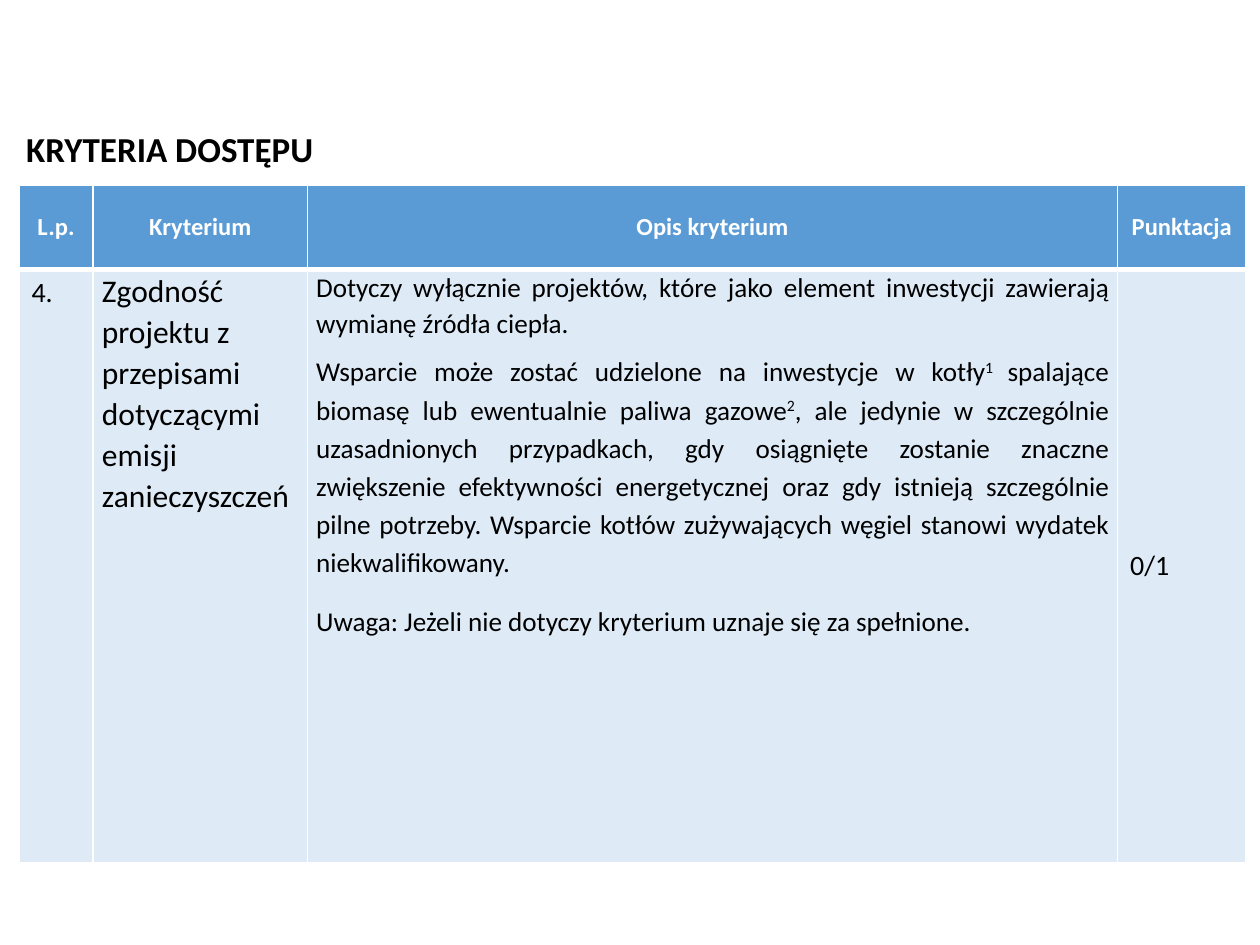
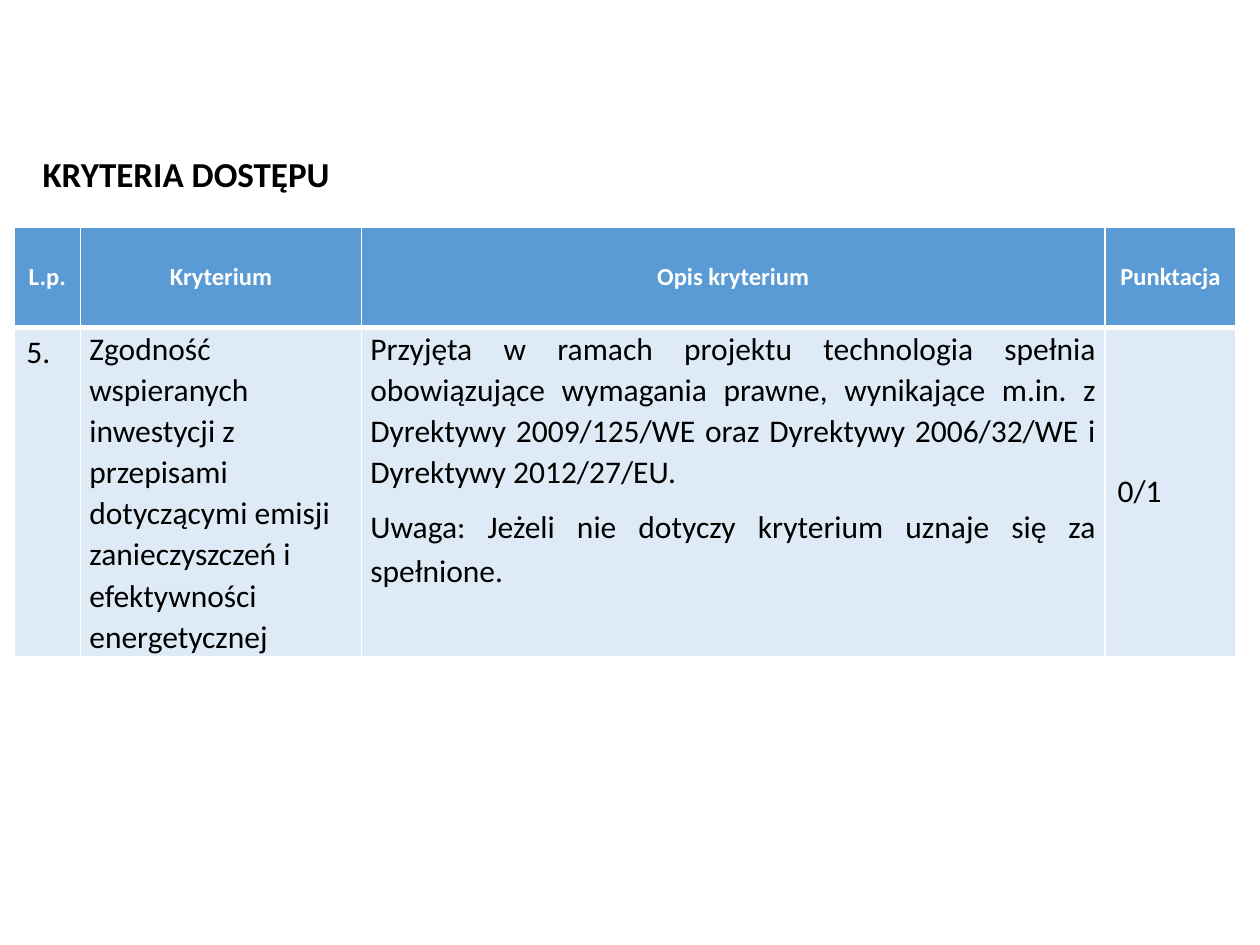
from lxml.etree import SubElement
from pptx import Presentation
from pptx.dml.color import RGBColor
from pptx.enum.text import MSO_ANCHOR as Anchor, MSO_AUTO_SIZE as AutoSize, PP_ALIGN as Align
from pptx.oxml.ns import qn
from pptx.util import Pt

EMU_PER_PX = 9144
FONT = "Calibri"
WHITE, BLACK = "FFFFFF", "000000"
HEADER_FILL, BODY_FILL = "5B9BD5", "DEEBF7"
TITLE = "KRYTERIA DOSTĘPU"
HEADINGS = ["L.p.", "Kryterium", "Opis kryterium", "Punktacja"]
NOTE = "Uwaga: Jeżeli nie dotyczy kryterium uznaje się za spełnione."
SCORE = "0/1"

CENTERED = {"alignment": Align.CENTER}
CRITERION = {"line_spacing": 1.07, "space_after": Pt(6)}
LEAD = {"alignment": Align.JUSTIFY, "line_spacing": 1.07}
DETAIL = {"alignment": Align.JUSTIFY, "line_spacing": 1.15,
          "space_before": Pt(6), "space_after": Pt(6)}
MIDDLE = {"vertical_anchor": Anchor.MIDDLE}


def px(value):
    return int(value * EMU_PER_PX)


def color(value):
    return RGBColor.from_string(value)


def apply(target, values):
    for name, value in values.items():
        setattr(target, name, value)


TIGHT = {"margin_left": px(7), "margin_right": px(7), "margin_top": 0, "margin_bottom": 0}


def write_text(frame, paragraphs, size, ink=BLACK, bold=False):
    for index, (runs, layout) in enumerate(paragraphs):
        paragraph = frame.add_paragraph() if index else frame.paragraphs[0]
        apply(paragraph, layout)
        for position, text in enumerate(runs):
            run = paragraph.add_run()
            run.text = text
            apply(run.font, {"name": FONT, "size": Pt(size), "bold": bold})
            run.font.color.rgb = color(ink)
            if position % 2:
                run._r.get_or_add_rPr().set("baseline", "30000")


def add_borders(cell, top, bottom):
    properties = cell._tc.get_or_add_tcPr()
    for side, width in {"L": 1, "R": 1, "T": top, "B": bottom}.items():
        line = SubElement(properties, qn(f"a:ln{side}"), w=str(Pt(width)))
        fill = SubElement(line, qn("a:solidFill"))
        SubElement(fill, qn("a:srgbClr"), val=WHITE)


def style_cell(cell, fill, top, bottom, layout):
    add_borders(cell, top, bottom)
    cell.fill.solid()
    cell.fill.fore_color.rgb = color(fill)
    apply(cell, layout)


def add_title(slide, left, top):
    frame = slide.shapes.add_textbox(px(left), px(top), px(370), px(44)).text_frame
    apply(frame, {"word_wrap": True, "auto_size": AutoSize.SHAPE_TO_FIT_TEXT, **MIDDLE})
    write_text(frame, [([TITLE], {})], 20, bold=True)


def add_criteria_table(slide, left, top, widths, heights, entries):
    table = slide.shapes.add_table(2, len(widths), px(left), px(top),
                                   px(sum(widths)), px(sum(heights))).table
    table.horz_banding = False
    for column, width in zip(table.columns, widths):
        column.width = px(width)
    for row, height in zip(table.rows, heights):
        row.height = px(height)
    for cell, heading in zip(table.rows[0].cells, HEADINGS):
        style_cell(cell, HEADER_FILL, 1, 3, MIDDLE)
        write_text(cell.text_frame, [([heading], CENTERED)], 14, WHITE, True)
    for cell, (paragraphs, size), layout in zip(
            table.rows[1].cells, entries, [{}, TIGHT, TIGHT, MIDDLE]):
        style_cell(cell, BODY_FILL, 3, 1, layout)
        write_text(cell.text_frame, paragraphs, size)


def add_criterion_slide(presentation, title_at, table_at, widths, heights,
                        number, criterion, description, sizes):
    slide = presentation.slides.add_slide(presentation.slide_layouts[6])
    contents = [[([number], {})], [([criterion], CRITERION)],
                description, [([SCORE], {})]]
    add_criteria_table(slide, *table_at, widths, heights, zip(contents, sizes))
    add_title(slide, *title_at)


def main():
    presentation = Presentation()
    apply(presentation, {"slide_width": px(1000), "slide_height": px(750)})
    add_criterion_slide(
        presentation, (11, 96), (15, 147), [59, 170, 643, 102], [67, 471], "4.",
        "Zgodność projektu z przepisami dotyczącymi emisji zanieczyszczeń",
        [(["Dotyczy wyłącznie projektów, które jako element inwestycji zawierają "
           "wymianę źródła ciepła."], LEAD),
         (["Wsparcie może zostać udzielone na inwestycje w kotły", "1 ",
           "spalające biomasę lub ewentualnie paliwa gazowe", "2",
           ", ale jedynie w szczególnie uzasadnionych przypadkach, gdy osiągnięte "
           "zostanie znaczne zwiększenie efektywności energetycznej oraz gdy istnieją "
           "szczególnie pilne potrzeby. Wsparcie kotłów zużywających węgiel stanowi "
           "wydatek niekwalifikowany."], DETAIL),
         ([NOTE], DETAIL)],
        [16, 18, 15.5, 16])
    add_criterion_slide(
        presentation, (24, 116), (11, 180), [53, 223, 590, 104], [80, 261], "5.",
        "Zgodność wspieranych inwestycji z przepisami dotyczącymi emisji "
        "zanieczyszczeń i efektywności energetycznej",
        [(["Przyjęta w ramach projektu technologia spełnia obowiązujące wymagania "
           "prawne, wynikające m.in. z Dyrektywy 2009/125/WE oraz Dyrektywy "
           "2006/32/WE i Dyrektywy 2012/27/EU."], LEAD),
         ([NOTE], DETAIL)],
        [18] * 4)
    presentation.save("out.pptx")


if __name__ == "__main__":
    main()
